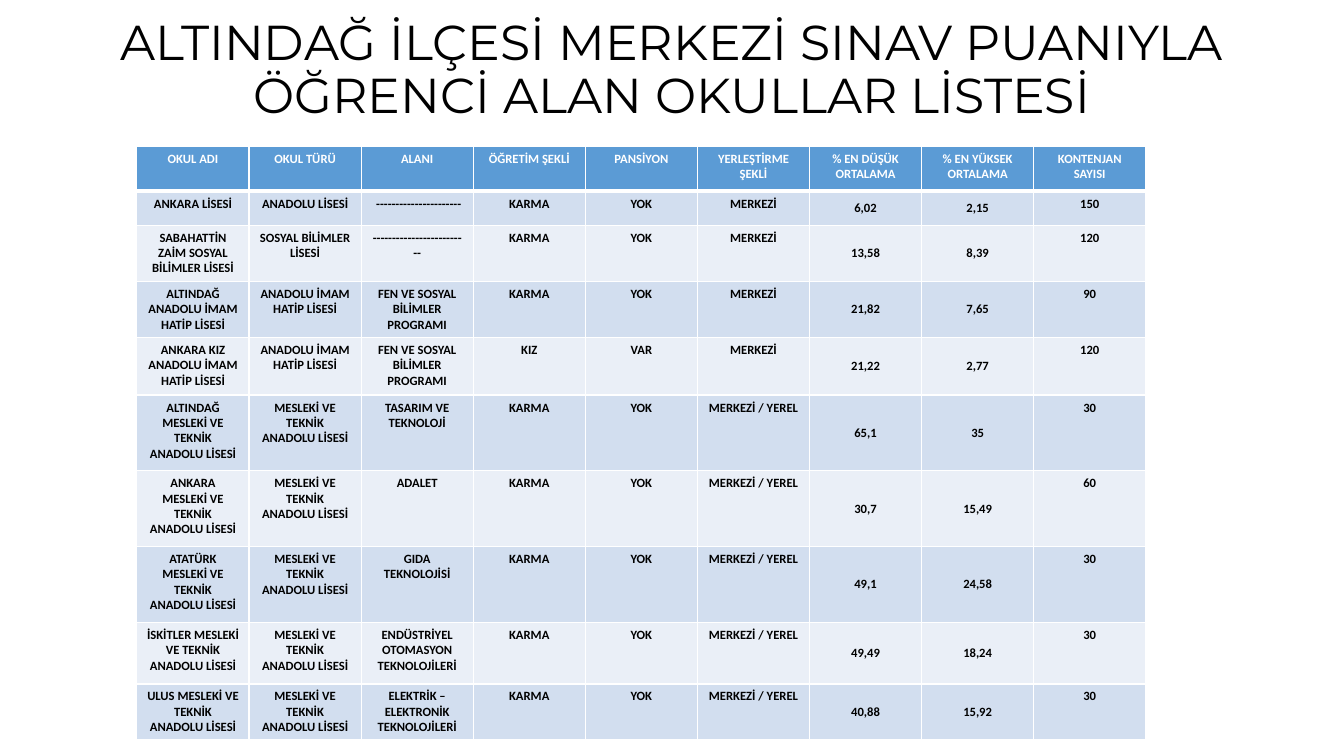
import pptx
import pptx.dml.color
import pptx.enum.text
import pptx.oxml
import pptx.oxml.ns
import pptx.util
from pptx.util import Cm

TITLE = "ALTINDAĞ İLÇESİ MERKEZİ SINAV PUANIYLA ÖĞRENCİ ALAN OKULLAR LİSTESİ"
HEADERS = ("OKUL ADI", "OKUL TÜRÜ", "ALANI", "ÖĞRETİM ŞEKLİ", "PANSİYON",
           "YERLEŞTİRME ŞEKLİ", "% EN DÜŞÜK ORTALAMA", "% EN YÜKSEK ORTALAMA",
           "KONTENJAN SAYISI")
IMAM_HATIP = "ANADOLU İMAM HATİP LİSESİ"
VOCATIONAL = "MESLEKİ VE TEKNİK ANADOLU LİSESİ"
SCIENCE = "FEN VE SOSYAL BİLİMLER PROGRAMI"
CENTRAL = "MERKEZİ"
MIXED = "MERKEZİ / YEREL"
SCHOOLS = [
    ("ANKARA LİSESİ", "ANADOLU LİSESİ", " ----------------------",
     "KARMA", "YOK", CENTRAL, "6,02", "2,15", "150"),
    ("SABAHATTİN ZAİM SOSYAL BİLİMLER LİSESİ", "SOSYAL BİLİMLER LİSESİ",
     "-------------------------", "KARMA", "YOK", CENTRAL, "13,58", "8,39", "120"),
    ("ALTINDAĞ ANADOLU İMAM HATİP LİSESİ", IMAM_HATIP, SCIENCE,
     "KARMA", "YOK", CENTRAL, "21,82", "7,65", "90"),
    ("ANKARA KIZ ANADOLU İMAM HATİP LİSESİ", IMAM_HATIP, SCIENCE,
     "KIZ", "VAR", CENTRAL, "21,22", "2,77", "120"),
    ("ALTINDAĞ MESLEKİ VE TEKNİK ANADOLU LİSESİ", VOCATIONAL, "TASARIM VE TEKNOLOJİ",
     "KARMA", "YOK", MIXED, "65,1", "35", "30"),
    ("ANKARA MESLEKİ VE TEKNİK ANADOLU LİSESİ", VOCATIONAL, "ADALET",
     "KARMA", "YOK", MIXED, "30,7", "15,49", "60"),
    ("ATATÜRK MESLEKİ VE TEKNİK ANADOLU LİSESİ", VOCATIONAL, "GIDA TEKNOLOJİSİ",
     "KARMA", "YOK", MIXED, "49,1", "24,58", "30"),
    ("İSKİTLER MESLEKİ VE TEKNİK ANADOLU LİSESİ", VOCATIONAL,
     "ENDÜSTRİYEL OTOMASYON TEKNOLOJİLERİ",
     "KARMA", "YOK", MIXED, "49,49", "18,24", "30"),
    ("ULUS MESLEKİ VE TEKNİK ANADOLU LİSESİ", VOCATIONAL,
     "ELEKTRİK – ELEKTRONİK TEKNOLOJİLERİ",
     "KARMA", "YOK", MIXED, "40,88", "15,92", "30"),
]
ROW_HEIGHTS = (1.14, 0.86, 1.27, 1.3, 1.45, 1.91, 1.91, 1.91, 1.55, 1.32)
AVERAGE_COLUMNS = (6, 7)

SLIDE_WIDTH, SLIDE_HEIGHT = Cm(33.87), Cm(19.05)
TABLE_WIDTH = Cm(25.43)
AVERAGE_MARGIN = Cm(0.05)

BLACK = pptx.dml.color.RGBColor(0x00, 0x00, 0x00)
WHITE = pptx.dml.color.RGBColor(0xFF, 0xFF, 0xFF)
HEADER_BLUE = pptx.dml.color.RGBColor(0x5B, 0x9B, 0xD5)
DARK_BAND = pptx.dml.color.RGBColor(0xD2, 0xDE, 0xEF)
LIGHT_BAND = pptx.dml.color.RGBColor(0xEA, 0xEF, 0xF7)


def write_text(text_frame, text, size, font="Calibri", color=BLACK, bold=False, spacing=None):
    """Write one centred paragraph in the given format."""
    paragraph = text_frame.paragraphs[0]
    paragraph.alignment = pptx.enum.text.PP_ALIGN.CENTER
    paragraph.line_spacing = spacing
    run = paragraph.add_run()
    run.text = text
    run.font.size = pptx.util.Pt(size)
    run.font.name = font
    run.font.bold = bold
    run.font.color.rgb = color


def add_borders(cell, bottom_width):
    """Draw white lines on the four sides of a cell."""
    properties = cell._tc.get_or_add_tcPr()
    for side, width in (("L", 1), ("R", 1), ("T", 1), ("B", bottom_width)):
        properties.append(pptx.oxml.parse_xml(
            f'<a:ln{side} {pptx.oxml.ns.nsdecls("a")} w="{pptx.util.Pt(width)}">'
            f'<a:solidFill><a:srgbClr val="{WHITE}"/></a:solidFill></a:ln{side}>'))


def add_title(slide):
    """Fill and place the title placeholder."""
    title = slide.shapes.title
    title.left, title.top = Cm(0), Cm(1.24)
    title.width, title.height = SLIDE_WIDTH, Cm(1.12)
    title.text_frame.word_wrap = True
    title.text_frame.auto_size = pptx.enum.text.MSO_AUTO_SIZE.NONE
    title.text_frame.vertical_anchor = pptx.enum.text.MSO_ANCHOR.MIDDLE
    write_text(title.text_frame, TITLE, size=35, font="Montserrat", spacing=0.9)


def add_school_table(slide):
    """Add the table with one row for each school."""
    rows = [HEADERS] + SCHOOLS
    table = slide.shapes.add_table(
        len(rows), len(HEADERS), Cm(3.45), Cm(3.68), TABLE_WIDTH, Cm(sum(ROW_HEIGHTS))).table
    for column in table.columns:
        column.width = TABLE_WIDTH // len(HEADERS)
    for row_index, (values, height) in enumerate(zip(rows, ROW_HEIGHTS)):
        table.rows[row_index].height = Cm(height)
        is_header = row_index == 0
        band = DARK_BAND if row_index % 2 else LIGHT_BAND
        for column_index, value in enumerate(values):
            cell = table.cell(row_index, column_index)
            add_borders(cell, bottom_width=3 if is_header else 1)
            cell.fill.solid()
            cell.fill.fore_color.rgb = HEADER_BLUE if is_header else band
            write_text(cell.text_frame, value, size=9, bold=True,
                       color=WHITE if is_header else BLACK)
            if column_index in AVERAGE_COLUMNS and not is_header:
                cell.vertical_anchor = pptx.enum.text.MSO_ANCHOR.MIDDLE
                cell.margin_left = cell.margin_right = AVERAGE_MARGIN
                cell.margin_top = cell.margin_bottom = AVERAGE_MARGIN


def main():
    """Build the slide and save it."""
    presentation = pptx.Presentation()
    presentation.slide_width, presentation.slide_height = SLIDE_WIDTH, SLIDE_HEIGHT
    slide = presentation.slides.add_slide(presentation.slide_layouts.get_by_name("Title Only"))
    add_title(slide)
    add_school_table(slide)
    presentation.save("out.pptx")


if __name__ == "__main__":
    main()
